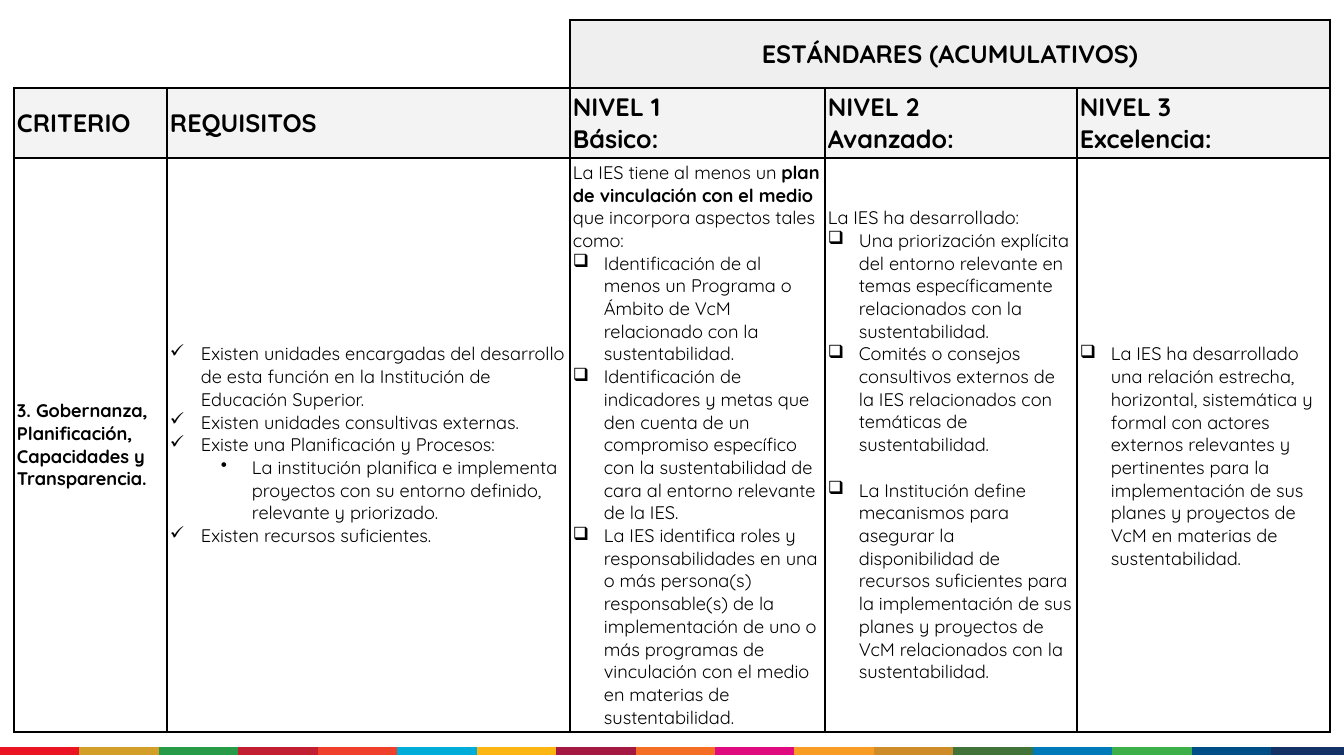
from lxml import etree
from pptx import Presentation
from pptx.dml.color import RGBColor
from pptx.enum.shapes import MSO_CONNECTOR
from pptx.enum.text import MSO_ANCHOR, PP_ALIGN
from pptx.oxml.ns import qn
from pptx.util import Pt

PX = 12192000 / 1344
STRAIGHT = MSO_CONNECTOR.STRAIGHT
MIDDLE = MSO_ANCHOR.MIDDLE
CENTER = PP_ALIGN.CENTER

FONT = "Quicksand"
BLACK = RGBColor(0x00, 0x00, 0x00)
WHITE = RGBColor(0xFF, 0xFF, 0xFF)
BANNER_GREY = RGBColor(0xEF, 0xEF, 0xEF)
HEADER_GREY = RGBColor(0xF3, 0xF3, 0xF3)
STRIP_COLOURS = [RGBColor.from_string(c) for c in (
    "EA1425 D29F28 279B48 C31F33 EF402B 00ADD8 FCB612 A31941 F36D25 "
    "E00C7F F99C24 CF8D2A 427338 007BBA 3EB049 004E86 153266").split()]

CHECK, BOX, DOT = "✓", "❑", "•"
MARGIN = 3
HANGING = 31
LEFT = {CHECK: 31, BOX: 31, DOT: 82}
BODY_LINE = 16.25

COLUMNS = [153, 403, 255, 252, 253]
ROWS = [68, 70, 574]
HEADERS = [
    ["CRITERIO"],
    ["REQUISITOS"],
    ["NIVEL 1", "Básico:"],
    ["NIVEL 2", "Avanzado:"],
    ["NIVEL 3", "Excelencia:"],
]
# Each paragraph is (bullet, text); ** switches bold on and off.
BODY = [
    [("", "**3. Gobernanza, Planificación, Capacidades y Transparencia.**")],
    [
        (CHECK, "Existen unidades encargadas del desarrollo de esta función en la "
                "Institución de Educación Superior."),
        (CHECK, "Existen unidades consultivas externas."),
        (CHECK, "Existe una Planificación y Procesos:"),
        (DOT, "La institución planifica e implementa proyectos con su entorno "
              "definido, relevante y priorizado."),
        (CHECK, "Existen recursos suficientes."),
    ],
    [
        ("", "La IES tiene al menos un **plan de vinculación con el medio** que "
             "incorpora aspectos tales como:"),
        (BOX, "Identificación de al menos un Programa o Ámbito de VcM relacionado "
              "con la sustentabilidad."),
        (BOX, "Identificación de indicadores y metas que den cuenta de un compromiso "
              "específico con la sustentabilidad de cara al entorno relevante de la IES."),
        (BOX, "La IES identifica roles y responsabilidades en una o más persona(s) "
              "responsable(s) de la implementación de uno o más programas de "
              "vinculación con el medio en materias de sustentabilidad."),
    ],
    [
        ("", "La IES ha desarrollado:"),
        (BOX, "Una priorización explícita del entorno relevante en temas "
              "específicamente relacionados con la sustentabilidad."),
        (BOX, "Comités o consejos consultivos externos de la IES relacionados con "
              "temáticas de sustentabilidad."),
        (BOX, "La Institución define mecanismos para asegurar la disponibilidad de "
              "recursos suficientes para la implementación de sus planes y proyectos "
              "de VcM relacionados con la sustentabilidad."),
    ],
    [
        (BOX, "La IES ha desarrollado una relación estrecha, horizontal, sistemática "
              "y formal con actores externos relevantes y pertinentes para la "
              "implementación de sus planes y proyectos de VcM en materias de "
              "sustentabilidad."),
    ],
]


def px(n):
    return round(n * PX)


def write(cell, paragraphs, size):
    """Fill a cell with (bullet, text) paragraphs, bold between ** marks."""
    tf = cell.text_frame
    for i, (bullet, text) in enumerate(paragraphs):
        p = tf.paragraphs[0] if i == 0 else tf.add_paragraph()
        if bullet:
            pPr = p._p.get_or_add_pPr()
            pPr.set("marL", str(px(LEFT[bullet])))
            pPr.set("indent", str(-px(HANGING)))
            etree.SubElement(pPr, qn("a:buChar")).set("char", bullet)
            p.level = 1 if bullet == DOT else 0
        for k, part in enumerate(text.split("**")):
            if part:
                r = p.add_run()
                r.text = part
                r.font.name = FONT
                r.font.size = Pt(size)
                r.font.bold = k % 2 == 1
                r.font.color.rgb = BLACK


prs = Presentation()
prs.slide_width, prs.slide_height = px(1344), px(756)
s = prs.slides.add_slide(prs.slide_layouts[6])

# Colour strip along the bottom
for i, colour in enumerate(STRIP_COLOURS):
    x1, x2 = round(i * 79.45), min(round((i + 1) * 79.45), 1344)
    line = s.shapes.add_connector(STRAIGHT, px(x1), px(751), px(x2), px(751))
    line.line.color.rgb = colour
    line.line.width = Pt(6)
    etree.SubElement(line._element.spPr, qn("a:effectLst"))

# Table grid
table = s.shapes.add_table(len(ROWS), len(COLUMNS), px(14), px(20),
                           px(sum(COLUMNS)), px(sum(ROWS))).table
table.first_row = False
table.horz_banding = False
for column, width in zip(table.columns, COLUMNS):
    column.width = px(width)
for row, height in zip(table.rows, ROWS):
    row.height = px(height)
table.cell(0, 0).merge(table.cell(0, 1))
table.cell(0, 2).merge(table.cell(0, 4))

for r, row in enumerate(table.rows):
    for c, cell in enumerate(row.cells):
        cell.vertical_anchor = MIDDLE
        cell.margin_left = cell.margin_right = px(MARGIN)
        cell.margin_top = cell.margin_bottom = px(MARGIN)
        corner = r == 0 and c < 2
        if corner or r == 2:
            cell.fill.background()
        else:
            cell.fill.solid()
            cell.fill.fore_color.rgb = BANNER_GREY if r == 0 else HEADER_GREY
        tcPr = cell._tc.get_or_add_tcPr()
        for i, side in enumerate("LRTB"):
            ln = etree.Element(qn(f"a:ln{side}"), w=str(Pt(1)))
            fill = etree.SubElement(ln, qn("a:solidFill"))
            colour = WHITE if corner and side in "LT" else BLACK
            etree.SubElement(fill, qn("a:srgbClr")).set("val", str(colour))
            tcPr.insert(i, ln)

# Table text
banner = table.cell(0, 2)
write(banner, [("", "**ESTÁNDARES (ACUMULATIVOS)**")], 18)
banner.text_frame.paragraphs[0].alignment = CENTER
for c, (header, body) in enumerate(zip(HEADERS, BODY)):
    write(table.cell(1, c), [("", f"**{text}**") for text in header], 18)
    write(table.cell(2, c), body, 13)
table.cell(2, 3).text_frame.paragraphs[-1].space_before = Pt(BODY_LINE)
table.cell(2, 4).margin_top = px(MARGIN) + Pt(BODY_LINE)

prs.save("out.pptx")
